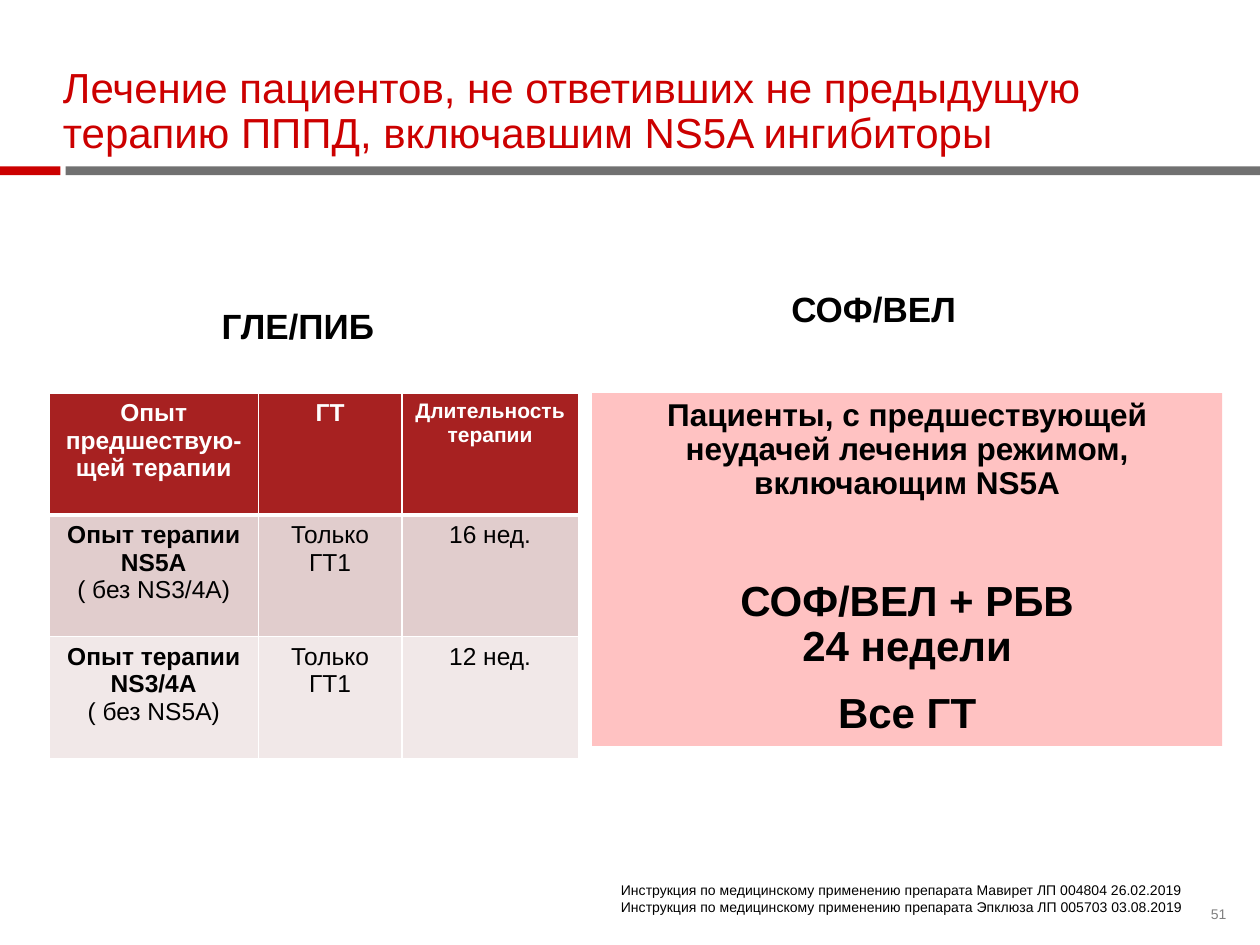
import pptx
import pptx.util
import pptx.dml.color
import pptx.enum.shapes
import pptx.enum.text
import pptx.oxml

Pt = pptx.util.Pt
ALIGN = pptx.enum.text.PP_ALIGN
ANCHOR = pptx.enum.text.MSO_ANCHOR
RED, GREY, BLACK, WHITE = "CC0000", "717171", "000000", "FFFFFF"
HEADER, ROSE, PALE, PINK = "A72121", "E1CDCD", "F1E8E8", "FFC2C2"


def color(value):
    return pptx.dml.color.RGBColor.from_string(value)


def line(text, size, ink=BLACK, bold=False, before=0):
    return {"text": text, "size": size, "ink": ink, "bold": bold, "before": before}


class Deck:
    font = "Arial"

    def __init__(self, width, height):
        self.prs = pptx.Presentation()
        self.prs.slide_width = pptx.util.Inches(width)
        self.prs.slide_height = pptx.util.Inches(height)
        self.slide = self.prs.slides.add_slide(self.prs.slide_layouts[6])

    def place(self, left, top, width, height):
        w, h = self.prs.slide_width, self.prs.slide_height
        return [int(share * side / 100) for share, side in
                ((left, w), (top, h), (width, w), (height, h))]

    def fill_text(self, frame, lines, align=ALIGN.LEFT, spacing=None):
        frame.word_wrap = True
        for index, item in enumerate(lines):
            paragraph = frame.add_paragraph() if index else frame.paragraphs[0]
            paragraph.alignment = align
            paragraph.line_spacing = spacing
            paragraph.space_before = Pt(item["before"])
            for part_index, part in enumerate(item["text"].split("\n")):
                if part_index:
                    paragraph.add_line_break()
                run = paragraph.add_run()
                run.text = part
                run.font.name = self.font
                run.font.size = Pt(item["size"])
                run.font.bold = item["bold"]
                run.font.color.rgb = color(item["ink"])

    def text(self, box, lines, inset=True, anchor=ANCHOR.TOP, spacing=None):
        frame = self.slide.shapes.add_textbox(*self.place(*box)).text_frame
        if not inset:
            frame.margin_left = frame.margin_right = 0
            frame.margin_top = frame.margin_bottom = 0
        frame.vertical_anchor = anchor
        self.fill_text(frame, lines, spacing=spacing)

    def block(self, box, fill, lines=()):
        shape = self.slide.shapes.add_shape(
            pptx.enum.shapes.MSO_SHAPE.RECTANGLE, *self.place(*box))
        shape.shadow.inherit = False
        shape.fill.solid()
        shape.fill.fore_color.rgb = color(fill)
        shape.line.fill.background()
        shape.text_frame.vertical_anchor = ANCHOR.TOP
        self.fill_text(shape.text_frame, lines, ALIGN.CENTER, 0.9)

    def border(self, cell, bottom):
        properties = cell._tc.get_or_add_tcPr()
        for side, width in (("L", 1), ("R", 1), ("T", 1), ("B", bottom)):
            properties.append(pptx.oxml.parse_xml(
                '<a:ln%s xmlns:a="http://schemas.openxmlformats.org/drawingml/2006/main" w="%d">'
                '<a:solidFill><a:srgbClr val="%s"/></a:solidFill></a:ln%s>'
                % (side, Pt(width), WHITE, side)))

    def table(self, box, columns, fills, rows):
        place = self.place(*box)
        table = self.slide.shapes.add_table(len(rows), len(columns), *place).table
        for column, share in zip(table.columns, columns):
            column.width = int(share * self.prs.slide_width / 100)
        for r, (fill, row) in enumerate(zip(fills, rows)):
            for c, lines in enumerate(row):
                cell = table.cell(r, c)
                self.border(cell, 1 if r else 3)
                cell.fill.solid()
                cell.fill.fore_color.rgb = color(fill)
                self.fill_text(cell.text_frame, lines, ALIGN.CENTER)


def therapy(experience, without, genotype, duration):
    return [[line(experience, 14, bold=True), line(without, 14)],
            [line(genotype, 14)], [line(duration, 14)]]


def main():
    deck = Deck(10, 7.5)
    deck.block((5.2, 17.6, 94.8, 0.93), GREY)
    deck.block((0, 17.6, 4.8, 0.93), RED)
    deck.text((96.1, 96, 3.5, 3.6), [line("51", 8, "808080")], False, spacing=0.9)
    deck.text((5, 6.8, 90, 9.87), [line(
        "Лечение пациентов, не ответивших не предыдущую терапию ПППД, "
        "включавшим NS5A ингибиторы", 24, RED)], False, ANCHOR.BOTTOM, 0.9)
    for regimen, box in (("ГЛЕ/ПИБ", (17.6, 32.67, 22.2, 8.93)),
                         ("СОФ/ВЕЛ", (62.8, 30.93, 25.1, 62.8))):
        deck.text(box, [line(regimen, 20, bold=True)], False, spacing=0.9)

    deck.block((47, 41.6, 50, 37.33), PINK, [
        line("Пациенты, с предшествующей неудачей лечения режимом, включающим NS5A",
             18, bold=True),
        line("СОФ/ВЕЛ + РБВ\n24 недели", 24, bold=True, before=45),
        line("Все ГТ", 24, bold=True, before=12)])

    headings = (("Опыт предшествую-щей терапии", 14), ("ГТ", 14),
                ("Длительность терапии", 12))
    deck.table((3.9, 41.6, 42, 38.67), (16.6, 11.4, 14), (HEADER, ROSE, PALE), [
        [[line(heading, size, WHITE, True)] for heading, size in headings],
        therapy("Опыт терапии NS5A", "( без NS3/4A)", "Только ГТ1", "16 нед."),
        therapy("Опыт терапии NS3/4A", "( без NS5A)", "Только ГТ1", "12 нед.")])

    deck.text((48.3, 92.67, 50, 4.93), [
        line("Инструкция по медицинскому применению препарата " + source, 8)
        for source in ("Мавирет ЛП 004804 26.02.2019", "Эпклюза ЛП 005703 03.08.2019")])
    deck.prs.save("out.pptx")


if __name__ == "__main__":
    main()
